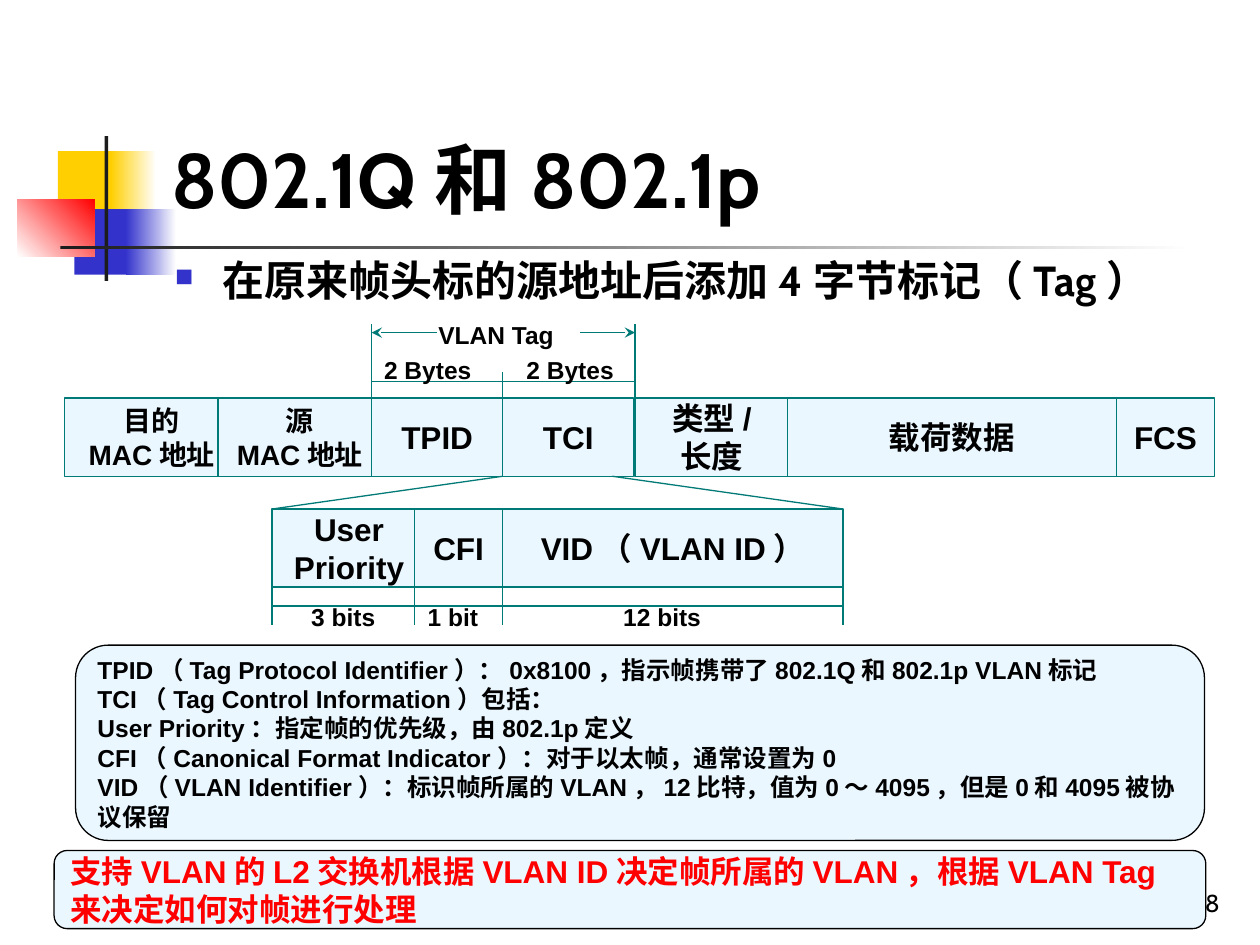
from lxml import etree
from pptx import Presentation
from pptx.dml.color import RGBColor
from pptx.enum import shapes, text
from pptx.oxml.ns import qn
from pptx.util import Inches, Pt

HUE = {"gold": "FFCF01", "blue": "3333CC", "red": "FF0000", "dark": "1C1C1C",
       "white": "FFFFFF", "black": "000000", "pale": "EBF7FF", "teal": "007A77"}
RECT, ROUND = shapes.MSO_SHAPE.RECTANGLE, shapes.MSO_SHAPE.ROUNDED_RECTANGLE
LEFT, MID, RIGHT = text.PP_ALIGN.LEFT, text.PP_ALIGN.CENTER, text.PP_ALIGN.RIGHT
TOP, CENTER, BASE = (text.MSO_ANCHOR.TOP, text.MSO_ANCHOR.MIDDLE,
                     text.MSO_ANCHOR.BOTTOM)

# left, top, width, height, colours, angle
DECOR = [
    (0.46, 1.2, 0.48, 0.52, ["gold"], 0),
    (0.88, 1.2, 0.36, 0.52, ["gold", "white"], 0),
    (0.59, 1.66, 0.46, 0.52, ["blue"], 0),
    (1, 1.66, 0.4, 0.52, ["blue", "white"], 0),
    (0.14, 1.58, 0.61, 0.46, ["white", "red"], 45),
    (0.83, 1.08, 0.03, 1.15, ["dark"], 0),
    (0.48, 1.95, 9, 0.03, ["dark", "white"], 0),
]
TITLE = "802.1Q和802.1p"
POINT = "在原来帧头标的源地址后添加4字节标记（Tag）"
NUMBER = "108"

# left, width, words, size
FRAME = [
    (0.51, 1.39, "目的\vMAC地址", 16),
    (1.73, 1.3, "源\vMAC地址", 16),
    (2.95, 1.04, "TPID", 18),
    (3.99, 1.04, "TCI", 18),
    (5.04, 1.22, "类型/\n长度", 18),
    (6.25, 2.61, "载荷数据", 18),
    (8.86, 0.78, "FCS", 18),
]
FIELDS = [
    (2.16, 1.22, "User Priority", 18),
    (3.29, 0.7, "CFI", 18),
    (3.99, 2.7, "VID（VLAN ID）", 18),
]
ROWS = [(3.16, FRAME), (4.04, FIELDS)]
CELL = 0.62

# left, top, width, words, alignment
LABELS = [
    (2.16, 4.73, 1.13, "3 bits", MID),
    (3.03, 4.73, 1.13, "1 bit", MID),
    (4.69, 4.73, 1.13, "12 bits", MID),
    (2.95, 2.77, 1.04, "2 Bytes", LEFT),
    (4.08, 2.77, 1.04, "2 Bytes", LEFT),
    (3.38, 2.49, 1.39, "VLAN Tag", LEFT),
]
# x1, y1, x2, y2
ZOOM = [(3.99, 3.78, 2.16, 4.04), (4.86, 3.78, 6.69, 4.04)]
RULES = [(2.16, 4.81, 6.69, 4.81), (2.95, 3.03, 5.04, 3.03)]
TICKS = [(x, 4.65, x, 4.96) for x in (2.16, 3.29, 3.99, 6.69)]
TICKS += [(x, 3.18, x, y) for x, y in ((2.95, 2.57), (3.99, 2.95), (5.04, 2.57))]
ARROWS = [(2.95, 2.64, 3.47, 2.64), (5.04, 2.64, 4.6, 2.64)]

# left, top, width, height, words, size, colour
NOTES = [
    (0.6, 5.12, 8.96, 1.55, "\n".join([
        "TPID（Tag Protocol Identifier）：0x8100，指示帧携带了802.1Q和802.1p VLAN标记",
        "TCI（Tag Control Information）包括：",
        "User Priority：指定帧的优先级，由802.1p定义",
        "CFI（Canonical Format Indicator）：对于以太帧，通常设置为0",
        "VID（VLAN Identifier）：标识帧所属的VLAN，12比特，值为0～4095，但是0和4095被协议保留",
    ]), 14, "black"),
    (0.43, 6.75, 9.14, 0.62,
     "支持VLAN的L2交换机根据VLAN ID决定帧所属的VLAN，根据VLAN Tag来决定如何对帧进行处理",
     18, "red"),
]


def tint(name):
    """Return the named colour."""
    return RGBColor.from_string(HUE[name])


def write(shape, words, size, font="Arial", hue="black", bold=True,
          align=LEFT, anchor=TOP):
    """Fill a shape with text of one style."""
    frame = shape.text_frame
    frame.word_wrap = True
    frame.vertical_anchor = anchor
    frame.text = words
    for para in frame.paragraphs:
        para.alignment = align
        para.font.name, para.font.size, para.font.bold = font, Pt(size), bold
        para.font.color.rgb = tint(hue)
    return frame


def label(box, words, size, **style):
    """Add a text box."""
    shape = slide.shapes.add_textbox(*map(Inches, box))
    return write(shape, words, size, **style)


def block(kind, box, hues, line=None, angle=0):
    """Add a shape with a plain or gradient fill."""
    shape = slide.shapes.add_shape(kind, *map(Inches, box))
    shape.shadow.inherit = False
    if len(hues) == 1:
        shape.fill.solid()
        shape.fill.fore_color.rgb = tint(hues[0])
    else:
        shape.fill.gradient()
        shape.fill.gradient_angle = angle
        for stop, hue, place in zip(shape.fill.gradient_stops, hues, (0, 1)):
            stop.color.rgb = tint(hue)
            stop.position = place
    if line:
        shape.line.color.rgb = tint(line)
        shape.line.width = Pt(0.75)
    else:
        shape.line.fill.background()
    return shape


def link(ends, head=False):
    """Add a teal line, with an arrowhead at its start if asked."""
    line = slide.shapes.add_connector(shapes.MSO_CONNECTOR.STRAIGHT,
                                      *map(Inches, ends))
    line.line.color.rgb = tint("teal")
    line.line.width = Pt(0.75)
    if head:
        etree.SubElement(line.line._get_or_add_ln(), qn("a:headEnd"), type="stealth")
    etree.SubElement(line._element.spPr, qn("a:effectLst"))


def bullet(para, mark, hue, scale, indent):
    """Give a paragraph a coloured bullet and a hanging indent."""
    props = para._p.get_or_add_pPr()
    props.set("marL", str(Inches(indent)))
    props.set("indent", str(-Inches(indent)))
    spot = props.find(qn("a:defRPr"))
    color = etree.Element(qn("a:buClr"))
    etree.SubElement(color, qn("a:srgbClr"), val=HUE[hue])
    size = etree.Element(qn("a:buSzPct"), val=str(scale * 1000))
    char = etree.Element(qn("a:buChar"), char=mark)
    for part in (color, size, char):
        spot.addprevious(part)


deck = Presentation()
deck.slide_width, deck.slide_height = Inches(10), Inches(7.5)
slide = deck.slides.add_slide(deck.slide_layouts[6])

for *box, hues, angle in DECOR:
    block(RECT, box, hues, angle=angle)

label((7.7, 6.83, 2.08, 0.5), NUMBER, 14, font="Cabin", bold=False,
      align=RIGHT, anchor=BASE)
label((1.26, 0.23, 8.52, 1.6), TITLE, 44, font="Cabin", anchor=BASE)
point = label((1.29, 2.02, 8.5, 0.6), POINT, 24, font="Cabin").paragraphs[0]
point.line_spacing, point.space_before = 0.9, Pt(4.8)
bullet(point, "■", "blue", 60, 0.38)

for top, cells in ROWS:
    for left, width, words, size in cells:
        cell = block(RECT, (left, top, width, CELL), ["pale"], "teal")
        write(cell, words, size, align=MID, anchor=CENTER)

for ends in ZOOM + TICKS + RULES:
    link(ends)
for ends in ARROWS:
    link(ends, head=True)
for left, top, width, words, align in LABELS:
    label((left, top, width, 0.33), words, 14, align=align)
for *box, words, size, hue in NOTES:
    write(block(ROUND, box, ["pale"], "black"), words, size, hue=hue, anchor=CENTER)

deck.save("out.pptx")
